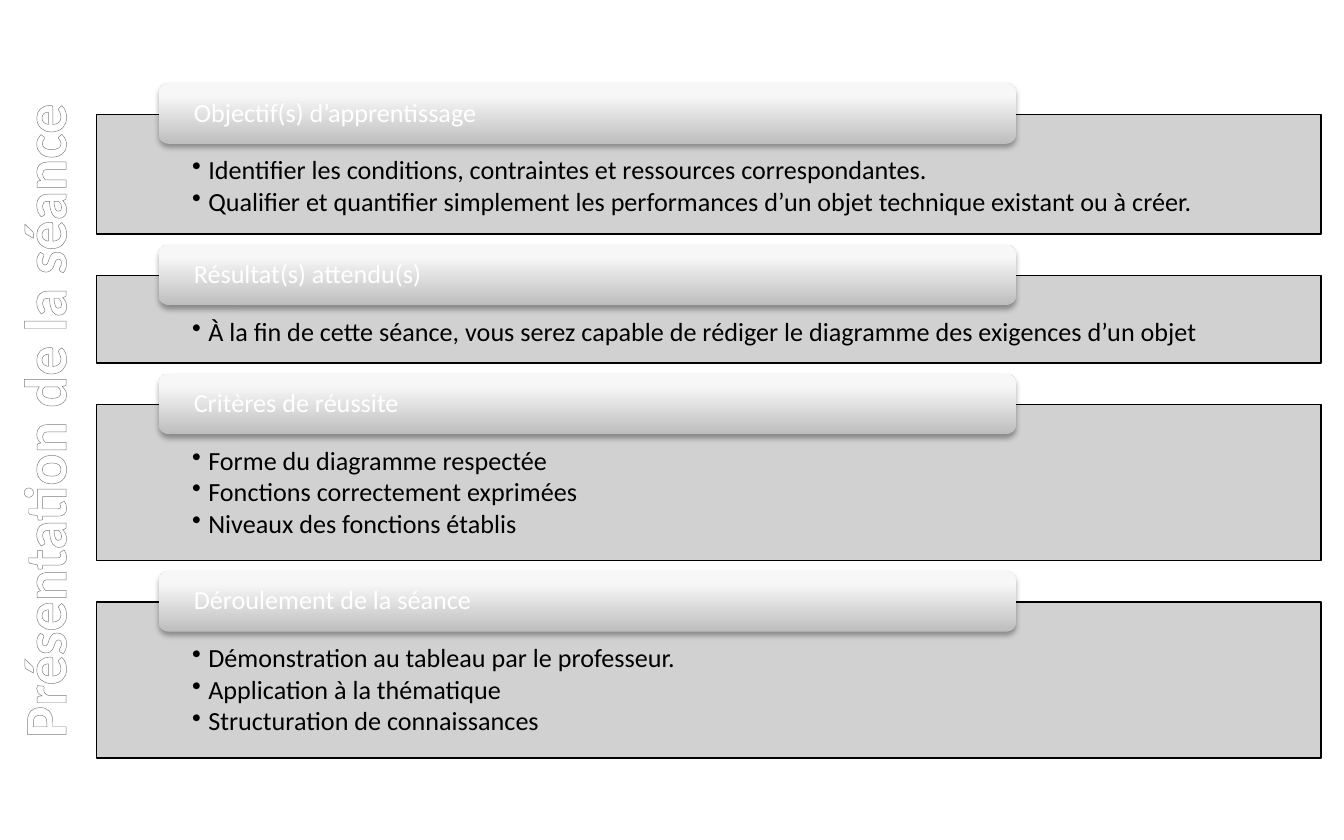
from lxml.etree import SubElement
from pptx import Presentation
from pptx.dml.color import RGBColor
from pptx.enum.shapes import MSO_SHAPE
from pptx.enum.text import MSO_ANCHOR, MSO_AUTO_SIZE, PP_ALIGN
from pptx.oxml import parse_xml
from pptx.oxml.ns import nsdecls, qn
from pptx.util import Inches, Pt

COLORS = {
    "white": "FFFFFF", "black": "000000", "panel": "CCCCCC",
    "tab_dark": "BEBEBE", "tab_light": "F7F7F7", "tab_edge": "F8F8F8",
    "title_mid": "7F7F7F", "title_outline": "7D7D7D",
}
FONT = "Calibri"
PANEL_LEFT, PANEL_WIDTH, FIRST_TOP, PANEL_GAP = 0.72, 9.11, 0.85, 0.31
TAB_LEFT, TAB_WIDTH, TAB_HEIGHT, TAB_RISE = 1.18, 6.38, 0.45, 0.23

SECTIONS = [
    ("Objectif(s) d’apprentissage", 0.89, [
        "Identifier les conditions, contraintes et ressources correspondantes.",
        "Qualifier et quantifier simplement les performances d’un objet technique existant ou à créer.",
    ]),
    ("Résultat(s) attendu(s)", 0.65, [
        "À la fin de cette séance, vous serez capable de rédiger le diagramme des exigences d’un objet",
    ]),
    ("Critères de réussite", 1.16, [
        "Forme du diagramme respectée",
        "Fonctions correctement exprimées",
        "Niveaux des fonctions établis",
    ]),
    ("Déroulement de la séance", 1.16, [
        "Démonstration au tableau par le professeur.",
        "Application à la thématique",
        "Structuration de connaissances",
    ]),
]


def rgb(name):
    return RGBColor.from_string(COLORS[name])


def gradient(stops, angle):
    """Return a linear gradient fill; stops are (percent, colour name)."""
    marks = "".join(
        f'<a:gs pos="{percent * 1000}"><a:srgbClr val="{COLORS[name]}"/></a:gs>'
        for percent, name in stops)
    return parse_xml(
        f'<a:gradFill {nsdecls("a")} rotWithShape="1"><a:gsLst>{marks}</a:gsLst>'
        f'<a:lin ang="{angle * 60000}" scaled="0"/></a:gradFill>')


def add_span(para, text, size, color=None, bold=False):
    span = para.add_run()
    span.text = text
    span.font.name = FONT
    span.font.size = Pt(size)
    span.font.bold = bold
    if color:
        span.font.color.rgb = rgb(color)
    return span


def add_bullet(para):
    properties = para._p.get_or_add_pPr()
    properties.set("marL", str(Inches(0.12)))
    properties.set("indent", str(-Inches(0.12)))
    SubElement(properties, qn("a:buChar")).set("char", "•")


def set_frame(box, anchor, left, top, right, bottom):
    frame = box.text_frame
    frame.word_wrap = True
    frame.vertical_anchor = anchor
    frame.margin_left, frame.margin_top = Inches(left), Inches(top)
    frame.margin_right, frame.margin_bottom = Inches(right), Inches(bottom)
    return frame


def add_title(page):
    title = page.shapes.title
    title.left, title.top = Inches(-2.81), Inches(2.81)
    title.width, title.height = Inches(6.25), Inches(0.64)
    title.rotation = 270
    frame = set_frame(title, MSO_ANCHOR.MIDDLE, 0.1, 0.05, 0.1, 0.05)
    frame.auto_size = MSO_AUTO_SIZE.SHAPE_TO_FIT_TEXT
    para = frame.paragraphs[0]
    para.alignment = PP_ALIGN.CENTER
    span = add_span(para, "Présentation de la séance", 32, bold=True)
    properties = span._r.get_or_add_rPr()
    properties.insert(0, parse_xml(
        f'<a:ln {nsdecls("a")} w="{Pt(0.83)}"><a:solidFill>'
        f'<a:srgbClr val="{COLORS["title_outline"]}"/></a:solidFill></a:ln>'))
    properties.insert(1, gradient(
        [(0, "white"), (9, "white"), (50, "title_mid"), (79, "white"), (100, "white")], 90))


def add_panel(page, top, height, items):
    panel = page.shapes.add_shape(
        MSO_SHAPE.RECTANGLE, Inches(PANEL_LEFT), Inches(top), Inches(PANEL_WIDTH), Inches(height))
    panel.shadow.inherit = False
    panel.fill.solid()
    panel.fill.fore_color.rgb = rgb("panel")
    fill_color = panel._element.spPr.find(qn("a:solidFill")).find(qn("a:srgbClr"))
    SubElement(fill_color, qn("a:alpha")).set("val", "90000")
    panel.line.color.rgb = rgb("black")
    panel.line.width = Pt(0.75)
    frame = set_frame(panel, MSO_ANCHOR.TOP, 0.71, 0.32, 0.71, 0.11)
    for index, item in enumerate(items):
        para = frame.add_paragraph() if index else frame.paragraphs[0]
        para.level = 1
        para.alignment = PP_ALIGN.LEFT
        para.line_spacing = 0.9
        para.space_after = Pt(1.8)
        add_bullet(para)
        add_span(para, item, 14, "black")


def add_tab(page, top, heading):
    tab = page.shapes.add_shape(
        MSO_SHAPE.ROUNDED_RECTANGLE, Inches(TAB_LEFT), Inches(top),
        Inches(TAB_WIDTH), Inches(TAB_HEIGHT))
    tab.line.fill.background()
    properties = tab._element.spPr
    properties.insert(2, gradient([(0, "tab_dark"), (80, "tab_light"), (100, "tab_edge")], 270))
    properties.append(parse_xml(
        f'<a:effectLst {nsdecls("a")}><a:outerShdw blurRad="{Pt(3.1)}" dist="{Pt(1.8)}" '
        f'dir="5400000" rotWithShape="0"><a:srgbClr val="{COLORS["black"]}">'
        f'<a:alpha val="35000"/></a:srgbClr></a:outerShdw></a:effectLst>'))
    para = set_frame(tab, MSO_ANCHOR.MIDDLE, 0.24, 0, 0.24, 0).paragraphs[0]
    para.alignment = PP_ALIGN.LEFT
    para.line_spacing = 0.9
    add_span(para, heading, 14, "white")


def main():
    deck = Presentation()
    deck.slide_width, deck.slide_height = Inches(10), Inches(6.25)
    page = deck.slides.add_slide(deck.slide_layouts[5])
    add_title(page)
    top = FIRST_TOP
    for heading, height, items in SECTIONS:
        add_panel(page, top, height, items)
        add_tab(page, top - TAB_RISE, heading)
        top += height + PANEL_GAP
    deck.save("out.pptx")


if __name__ == "__main__":
    main()
